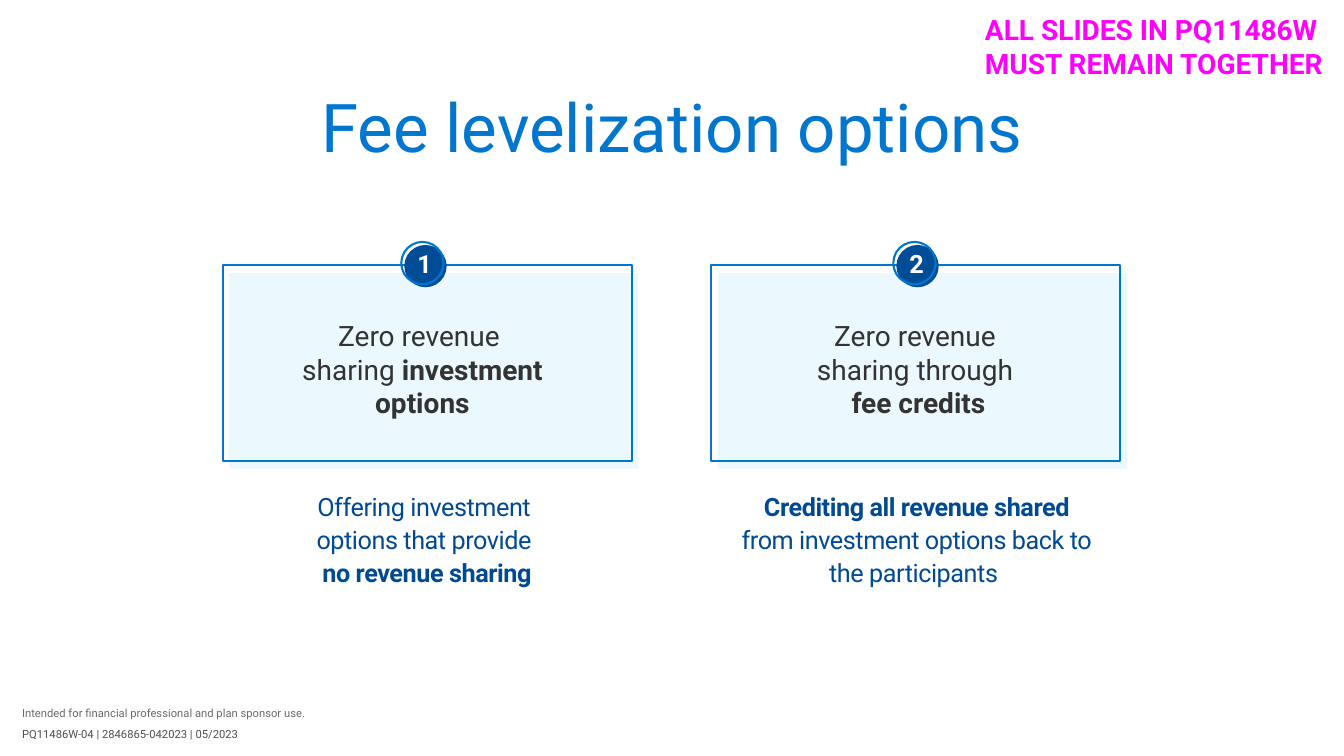
"""Build the fee levelization options slide."""
import pptx
import pptx.util
import pptx.dml.color
import pptx.enum.shapes
import pptx.enum.text

COLORS = {
    "title": "0076CF", "outline": "0076CF", "panel": "EBF8FE", "badge": "004C97",
    "number": "FFFFFF", "body": "333333", "detail": "004A93",
    "notice": "FF00FF", "audience": "696A6B", "code": "4D4E53",
}
TITLE = "Fee levelization options"
OPTIONS = [
    {
        "number": "1", "panel": 227, "outline": 221, "badge": 398,
        "heading": [("Zero revenue \nsharing ", False), ("investment options", True)],
        "heading_left": 268,
        "detail": [("Offering investment \noptions that provide \n", False),
                   ("no revenue sharing", True)],
        "detail_box": (242, 484, 363, 71), "tracking": -30,
    },
    {
        "number": "2", "panel": 712, "outline": 705, "badge": 886,
        "heading": [("Zero revenue \nsharing through \n", False), ("fee credits", True)],
        "heading_left": 760,
        "detail": [("Crediting all revenue shared ", True),
                   ("from investment options back to the participants ", False)],
        "detail_box": (733, 484, 352, 103), "tracking": -30,
    },
]
LABELS = [
    ("Intended for financial professional and plan sponsor use.",
     (12, 696, 341, 24), 8, "audience", False),
    ("PQ11486W-04 | 2846865-042023 | 05/2023", (12, 717, 422, 24), 8, "code", False),
    ("ALL SLIDES IN PQ11486W\nMUST REMAIN TOGETHER", (967, 8, 366, 77), 20, "notice", True),
]
FONT = "Roboto"
PX = 9144
SLIDE_SIZE = (1333, 750)
CARD_SIZE = (406, 194)
BADGE_SIZE = (42, 42)
CENTER = pptx.enum.text.PP_ALIGN.CENTER
SHAPES = pptx.enum.shapes.MSO_SHAPE


def emu(box):
    return [value * PX for value in box]


def rgb(name):
    return pptx.dml.color.RGBColor.from_string(COLORS[name])


def write(frame, runs, size, color, align=None, tracking=0):
    frame.word_wrap = True
    frame.auto_size = pptx.enum.text.MSO_AUTO_SIZE.NONE
    frame.vertical_anchor = pptx.enum.text.MSO_ANCHOR.TOP
    paragraph = frame.paragraphs[0]
    paragraph.alignment = align
    for text, bold in runs:
        for index, line in enumerate(text.split("\n")):
            if index:
                paragraph.add_line_break()
            if line:
                run = paragraph.add_run()
                run.text = line
                run.font.name = FONT
                run.font.size = pptx.util.Pt(size)
                run.font.bold = bold
                run.font.color.rgb = rgb(color)
                if tracking:
                    run.font._element.set("spc", str(tracking))
    return paragraph


def add_text(slide, box, runs, size, color, align=None, inset=True, tracking=0):
    frame = slide.shapes.add_textbox(*emu(box)).text_frame
    if not inset:
        frame.margin_left = frame.margin_right = 0
        frame.margin_top = frame.margin_bottom = 0
    return write(frame, runs, size, color, align, tracking)


def add_shape(slide, kind, box, fill=None, line=None):
    shape = slide.shapes.add_shape(kind, *emu(box))
    shape.shadow.inherit = False
    if fill:
        shape.fill.solid()
        shape.fill.fore_color.rgb = rgb(fill)
    else:
        shape.fill.background()
    if line:
        shape.line.color.rgb = rgb(line)
        shape.line.width = pptx.util.Pt(1.5)
    else:
        shape.line.fill.background()


def add_option(slide, option):
    add_shape(slide, SHAPES.RECTANGLE, (option["panel"], 271, *CARD_SIZE), fill="panel")
    add_text(slide, (option["heading_left"], 316, 302, 92), option["heading"],
             20, "body", CENTER, inset=False)
    add_shape(slide, SHAPES.RECTANGLE, (option["outline"], 263, *CARD_SIZE), line="outline")
    detail = add_text(slide, option["detail_box"], option["detail"], 18, "detail",
                      CENTER, inset=False, tracking=option["tracking"])
    detail.line_spacing = 1.1
    left = option["badge"]
    add_shape(slide, SHAPES.OVAL, (left + 3, 243, *BADGE_SIZE), fill="badge")
    add_shape(slide, SHAPES.OVAL, (left, 240, *BADGE_SIZE), line="outline")
    add_text(slide, (left + 6, 241, 35, 40), [(option["number"], True)], 18, "number")


def main():
    presentation = pptx.Presentation()
    presentation.slide_width, presentation.slide_height = emu(SLIDE_SIZE)
    slide = presentation.slides.add_slide(presentation.slide_layouts[5])
    title = slide.shapes.title
    title.left, title.top, title.width, title.height = emu((0, 95, 1333, 73))
    write(title.text_frame, [(TITLE, False)], 48, "title", CENTER).line_spacing = 0.8
    for option in OPTIONS:
        add_option(slide, option)
    for text, box, size, color, bold in LABELS:
        add_text(slide, box, [(text, bold)], size, color)
    presentation.save("out.pptx")


if __name__ == "__main__":
    main()
